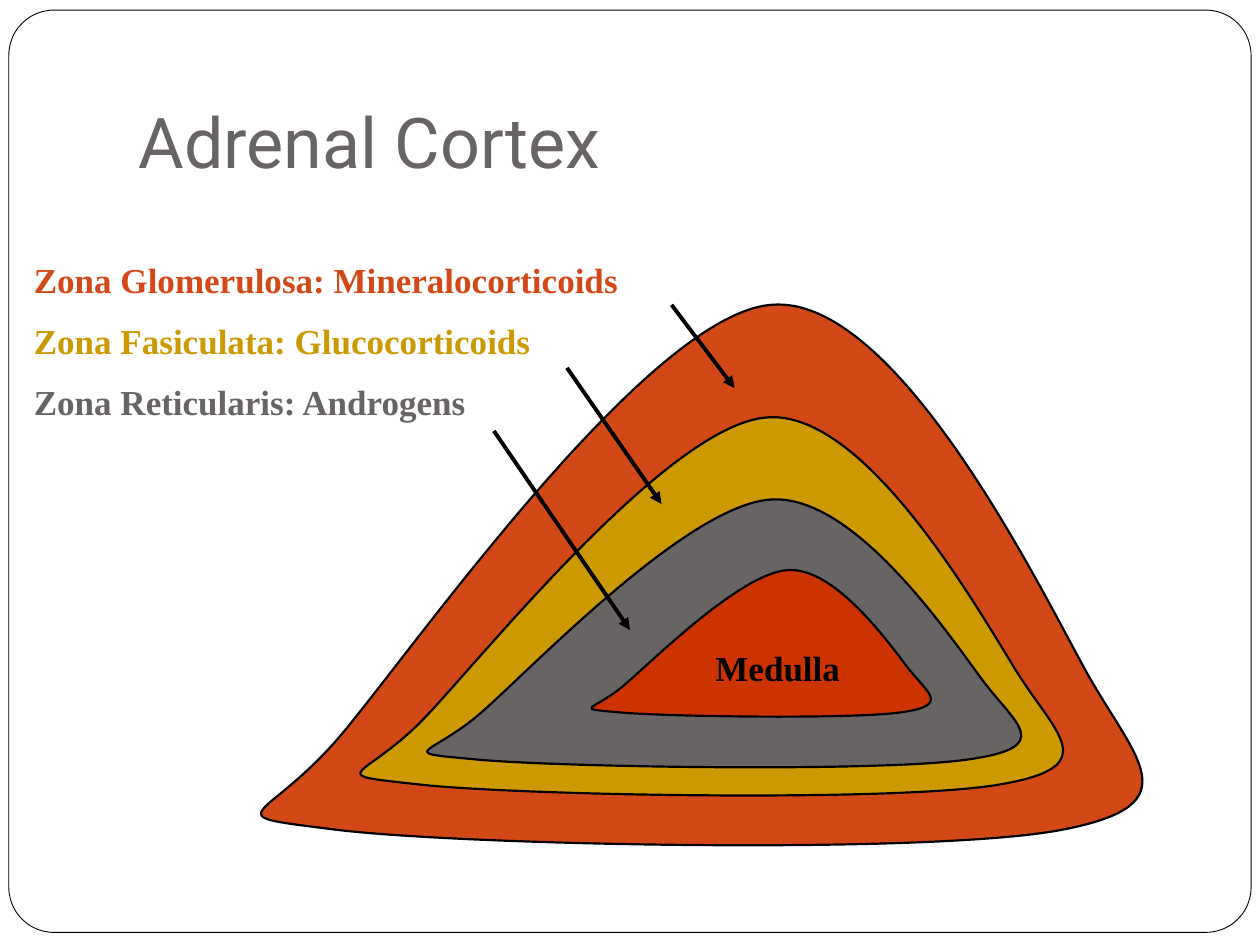
from lxml import etree
from pptx import Presentation
from pptx.dml.color import RGBColor
from pptx.enum.shapes import MSO_CONNECTOR, MSO_SHAPE
from pptx.enum.text import MSO_ANCHOR, PP_ALIGN
from pptx.oxml.ns import qn
from pptx.util import Inches, Pt

STRAIGHT = MSO_CONNECTOR.STRAIGHT
ROUNDED = MSO_SHAPE.ROUNDED_RECTANGLE
BOTTOM = MSO_ANCHOR.BOTTOM
LEFT = PP_ALIGN.LEFT

COLORS = {
    "white": "FFFFFF",
    "black": "000000",
    "glomerulosa": "D34817",
    "fasciculata": "CC9900",
    "reticularis": "696464",
    "medulla": "CC3300",
}

GLAND_BOX = (1.67, 2.33, 7.79, 4.46)
GLAND_CURVE = [
    (2.62, 6.58),
    (3.58, 6.71), (7.46, 6.79), (8.46, 6.58),
    (9.46, 6.38), (9.01, 6.03), (8.62, 5.33),
    (8.24, 4.64), (7.11, 2.33), (6.12, 2.42),
    (5.14, 2.5), (3.29, 5.14), (2.71, 5.83),
    (2.12, 6.53), (1.67, 6.46), (2.62, 6.58),
]
LAYERS = [
    ("glomerulosa", GLAND_BOX),
    ("fasciculata", (2.54, 3.25, 6.21, 3.12)),
    ("reticularis", (3.12, 3.92, 5.25, 2.21)),
    ("medulla", (4.54, 4.5, 3, 1.21)),
]
ZONES = [
    ("Zona Glomerulosa: Mineralocorticoids", "glomerulosa"),
    ("Zona Fasiculata: Glucocorticoids", "fasciculata"),
    ("Zona Reticularis: Androgens", "reticularis"),
]
ARROWS = [
    (5.33, 2.42, 5.83, 3.08),
    (4.5, 2.92, 5.25, 4),
    (3.92, 3.42, 5, 5),
]


def rgb(name):
    return RGBColor.from_string(COLORS[name])


def style_shape(shape, fill, line_width):
    shape.shadow.inherit = False
    shape.fill.solid()
    shape.fill.fore_color.rgb = rgb(fill)
    shape.line.color.rgb = rgb("black")
    shape.line.width = Pt(line_width)


def style_span(span, font, size, color, bold=False):
    span.font.name = font
    span.font.size = Pt(size)
    span.font.bold = bold
    span.font.color.rgb = rgb(color)


def set_title(page, text):
    title = page.shapes.title
    title.left, title.top = Inches(1), Inches(0.3)
    title.width, title.height = Inches(8.5), Inches(1.25)
    frame = title.text_frame
    frame.text = text
    frame.vertical_anchor = BOTTOM
    frame.margin_bottom = Inches(0.1)
    para = frame.paragraphs[0]
    para.alignment = LEFT
    style_span(para.runs[0], "Roboto", 40, "reticularis")


def add_border(page):
    border = page.shapes.add_shape(
        ROUNDED, Inches(0.07), Inches(0.08), Inches(9.86), Inches(7.32))
    border.adjustments[0] = 0.049
    style_shape(border, "white", 0.5)
    page.shapes.title._element.addprevious(border._element)


def add_labels(shapes, box, lines):
    label = shapes.add_textbox(*(Inches(value) for value in box))
    frame = label.text_frame
    frame.word_wrap = True
    frame.text = "\n".join(text for text, _ in lines)
    for index, (para, (_, color)) in enumerate(zip(frame.paragraphs, lines)):
        if index:
            para.space_before = Pt(11)
        style_span(para.runs[0], "Times New Roman", 20, color, bold=True)


def bend_segments(shape):
    segments = list(shape._element.iter(qn("a:lnTo")))
    for start in range(0, len(segments), 3):
        curve = etree.Element(qn("a:cubicBezTo"))
        segments[start].addprevious(curve)
        for segment in segments[start:start + 3]:
            curve.append(segment[0])
            segment.getparent().remove(segment)


def add_layer(shapes, color, box):
    left, top, width, height = box
    base_left, base_top, base_width, base_height = GLAND_BOX
    points = [
        (Inches(left + (x - base_left) * width / base_width),
         Inches(top + (y - base_top) * height / base_height))
        for x, y in GLAND_CURVE
    ]
    builder = shapes.build_freeform(*points[0])
    builder.add_line_segments(points[1:], close=True)
    layer = builder.convert_to_shape()
    bend_segments(layer)
    style_shape(layer, color, 1.25)


def add_arrow(page, ends):
    arrow = page.shapes.add_connector(
        STRAIGHT, *(Inches(value) for value in ends))
    arrow.line.color.rgb = rgb("black")
    arrow.line.width = Pt(2.25)
    etree.SubElement(arrow.line._get_or_add_ln(), qn("a:tailEnd"), type="triangle")
    etree.SubElement(arrow._element.spPr, qn("a:effectLst"))


def main():
    deck = Presentation()
    deck.slide_width, deck.slide_height = Inches(10), Inches(7.5)
    page = deck.slides.add_slide(deck.slide_layouts[5])
    add_border(page)
    set_title(page, "Adrenal Cortex")
    add_labels(page.shapes, (0.17, 2, 5.58, 1.43), ZONES)
    gland = page.shapes.add_group_shape()
    for color, box in LAYERS:
        add_layer(gland.shapes, color, box)
    add_labels(gland.shapes, (5.58, 5.08, 1.5, 0.43), [("Medulla", "black")])
    for ends in ARROWS:
        add_arrow(page, ends)
    deck.save("out.pptx")


if __name__ == "__main__":
    main()
